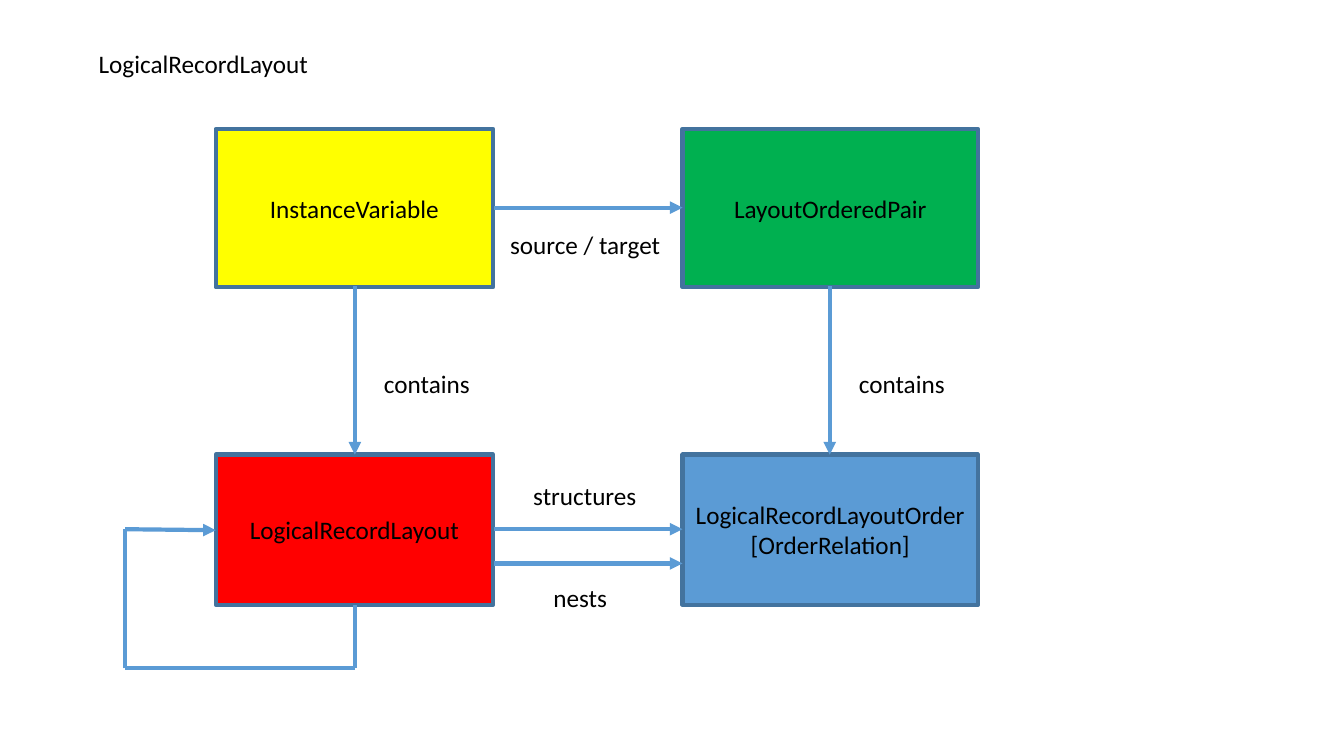
from pptx import Presentation
from pptx.dml.color import RGBColor
from pptx.enum.shapes import MSO_CONNECTOR, MSO_SHAPE
from pptx.enum.text import MSO_ANCHOR, MSO_AUTO_SIZE, PP_ALIGN
from pptx.oxml.ns import qn
from pptx.util import Inches, Pt
from lxml.etree import SubElement

BLACK = RGBColor(0x00, 0x00, 0x00)
YELLOW = RGBColor(0xFF, 0xFF, 0x00)
RED = RGBColor(0xFF, 0x00, 0x00)
GREEN = RGBColor(0x00, 0xB0, 0x50)
BLUE = RGBColor(0x5B, 0x9B, 0xD5)
BORDER = RGBColor(0x43, 0x73, 0x9E)

presentation = Presentation()
presentation.slide_width = Inches(13.33)
presentation.slide_height = Inches(7.5)
slide = presentation.slides.add_slide(presentation.slide_layouts[6])


def write_text(shape, text, align=PP_ALIGN.LEFT, anchor=MSO_ANCHOR.TOP, wrap=True):
    frame = shape.text_frame
    frame.word_wrap = wrap
    frame.vertical_anchor = anchor
    frame.text = text
    for paragraph in frame.paragraphs:
        paragraph.alignment = align
        paragraph.font.name = "Calibri"
        paragraph.font.size = Pt(18)
        paragraph.font.color.rgb = BLACK


def add_line(start, end, arrow=True):
    points = [Inches(value) for value in (*start, *end)]
    connector = slide.shapes.add_connector(MSO_CONNECTOR.STRAIGHT, *points)
    connector.line.color.rgb = BLUE
    connector.line.width = Pt(3)
    if arrow:
        SubElement(connector.line._get_or_add_ln(), qn("a:tailEnd"), type="triangle")
    SubElement(connector._element.spPr, qn("a:effectLst"))


# Boxes: two columns (left, width) by two rows (top, height)
columns = [(2.14, 2.75), (6.77, 2.93)]
rows = [(1.28, 1.57), (4.51, 1.49)]
boxes = [
    ("InstanceVariable", 0, 0, YELLOW),
    ("LogicalRecordLayout", 0, 1, RED),
    ("LogicalRecordLayoutOrder\n[OrderRelation]", 1, 1, BLUE),
    ("LayoutOrderedPair", 1, 0, GREEN),
]
for text, column, row, fill in boxes:
    left, width = columns[column]
    top, height = rows[row]
    box = slide.shapes.add_shape(
        MSO_SHAPE.RECTANGLE, Inches(left), Inches(top), Inches(width), Inches(height)
    )
    box.shadow.inherit = False
    box.fill.solid()
    box.fill.fore_color.rgb = fill
    box.line.color.rgb = BORDER
    box.line.width = Pt(3)
    write_text(box, text, align=PP_ALIGN.CENTER, anchor=MSO_ANCHOR.MIDDLE)

# Arrows between the rows and between the columns
for x in (3.52, 8.23):
    add_line((x, 2.84), (x, 4.51))
for y in (2.06, 5.25, 5.59):
    add_line((4.9, y), (6.77, y))

# Loop from LogicalRecordLayout back to itself
loop = [(3.52, 6), (3.52, 6.63), (1.24, 6.63), (1.24, 5.25), (2.14, 5.26)]
for start, end in zip(loop, loop[1:]):
    add_line(start, end, arrow=end == loop[-1])

# Title and arrow labels
labels = [
    ("LogicalRecordLayout", 0.88, 0.43, 2.3, False),
    ("contains", 3.71, 3.61, 1.06, False),
    ("contains", 8.42, 3.61, 1.06, False),
    ("structures", 5.19, 4.72, 1.24, False),
    ("nests", 5.39, 5.73, 0.74, False),
    ("source / target", 4.96, 2.23, 1.81, True),
]
for text, left, top, width, wrap in labels:
    label = slide.shapes.add_textbox(
        Inches(left), Inches(top), Inches(width), Inches(0.4)
    )
    label.text_frame.auto_size = MSO_AUTO_SIZE.SHAPE_TO_FIT_TEXT
    write_text(label, text, wrap=wrap)

presentation.save("out.pptx")
